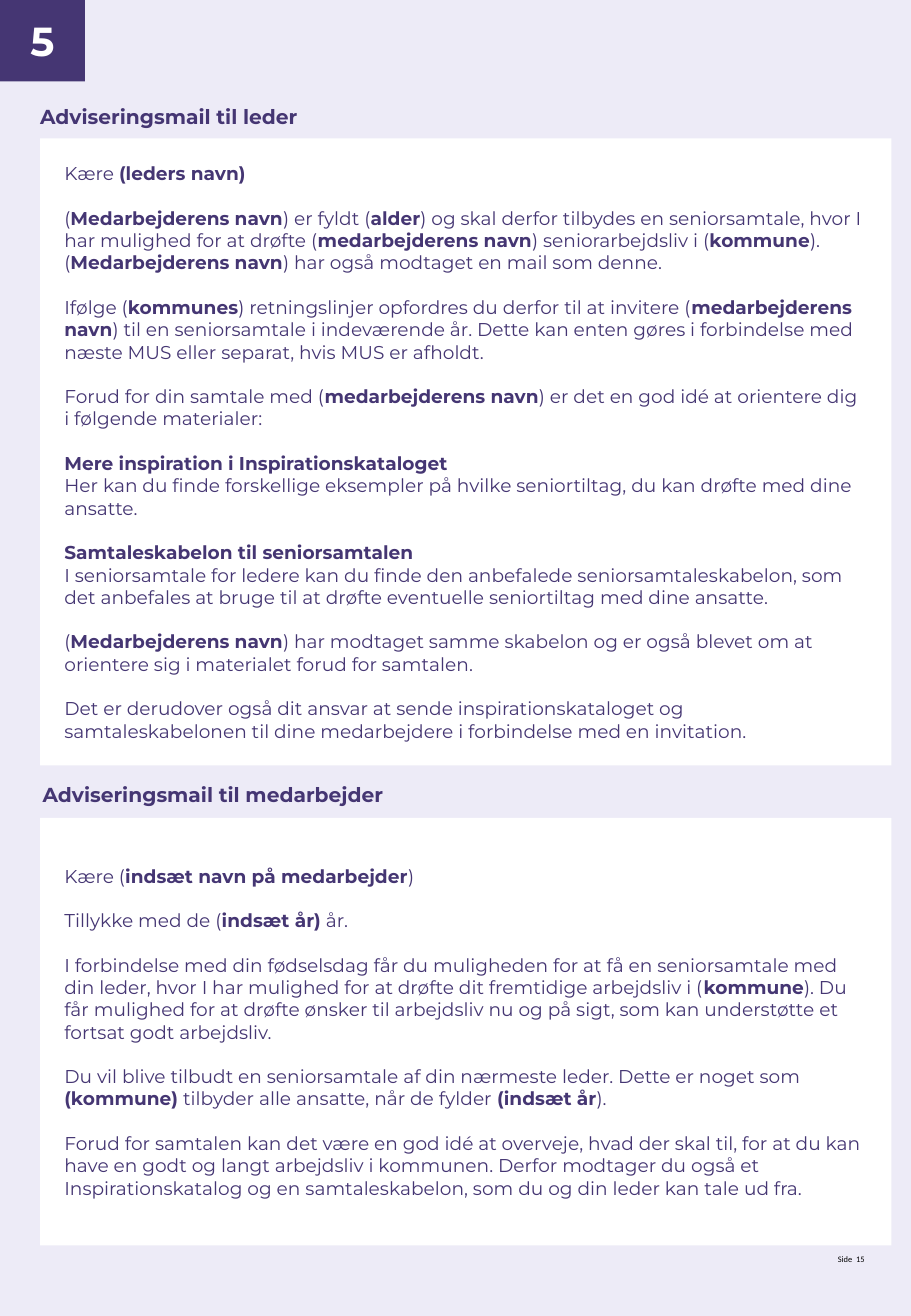
from pptx import Presentation
from pptx.dml.color import RGBColor
from pptx.enum.shapes import MSO_SHAPE
from pptx.enum.text import MSO_ANCHOR, MSO_AUTO_SIZE, PP_ALIGN
from pptx.util import Emu, Pt

PURPLE = RGBColor(0x45, 0x36, 0x73)
LAVENDER = RGBColor(0xED, 0xEB, 0xF7)
WHITE = RGBColor(0xFF, 0xFF, 0xFF)
BLACK = RGBColor(0x00, 0x00, 0x00)

EMU_PER_PX = 9144  # 100 px to the inch
MARGIN, MAIL_WIDTH, PADDING = 33, 701, 20
BLOCK_GAP = Pt(13.2)

HEADING = {"name": "Montserrat", "size": Pt(12), "bold": True}
NUMBER = {"name": "Montserrat", "size": Pt(24), "bold": True}
BODY = {"name": "Montserrat", "size": Pt(11)}
FOOTER = {"name": "Calibri", "size": Pt(5)}

# Each string is a block set off by a gap; asterisks enclose bold text.
LEADER_MAIL = [
    "Kære *(leders navn)*",
    "(*Medarbejderens navn*) er fyldt (*alder*) og skal derfor tilbydes en "
    "seniorsamtale, hvor I har mulighed for at drøfte (*medarbejderens navn*) "
    "seniorarbejdsliv i (*kommune*). (*Medarbejderens navn*) har også modtaget "
    "en mail som denne.",
    "Ifølge (*kommunes*) retningslinjer opfordres du derfor til at invitere "
    "(*medarbejderens navn*) til en seniorsamtale i indeværende år. Dette kan "
    "enten gøres i forbindelse med næste MUS eller separat, hvis MUS er afholdt.",
    "Forud for din samtale med (*medarbejderens navn*) er det en god idé at "
    "orientere dig i følgende materialer:",
    "*Mere inspiration i Inspirationskataloget*\n"
    "Her kan du finde forskellige eksempler på hvilke seniortiltag, du kan "
    "drøfte med dine ansatte.",
    "*Samtaleskabelon til seniorsamtalen*\n"
    "I seniorsamtale for ledere kan du finde den anbefalede "
    "seniorsamtaleskabelon, som det anbefales at bruge til at drøfte eventuelle "
    "seniortiltag med dine ansatte.",
    "(*Medarbejderens navn*) har modtaget samme skabelon og er også blevet om "
    "at orientere sig i materialet forud for samtalen.",
    "Det er derudover også dit ansvar at sende inspirationskataloget og "
    "samtaleskabelonen til dine medarbejdere i forbindelse med en invitation.",
]
EMPLOYEE_MAIL = [
    "Kære (*indsæt navn på medarbejder*)",
    "Tillykke med de (*indsæt år)* år.",
    "I forbindelse med din fødselsdag får du muligheden for at få en "
    "seniorsamtale med din leder, hvor I har mulighed for at drøfte dit "
    "fremtidige arbejdsliv i (*kommune*). Du får mulighed for at drøfte ønsker "
    "til arbejdsliv nu og på sigt, som kan understøtte et fortsat godt "
    "arbejdsliv.",
    "Du vil blive tilbudt en seniorsamtale af din nærmeste leder. Dette er "
    "noget som *(kommune)* tilbyder alle ansatte, når de fylder *(indsæt år*).",
    "Forud for samtalen kan det være en god idé at overveje, hvad der skal til, "
    "for at du kan have en godt og langt arbejdsliv i kommunen. Derfor modtager "
    "du også et Inspirationskatalog og en samtaleskabelon, som du og din leder "
    "kan tale ud fra.",
]


def px(*lengths):
    return [Emu(length * EMU_PER_PX) for length in lengths]


def set_values(target, values):
    for name, value in values.items():
        setattr(target, name, value)


def prepare_frame(box, padding, anchor):
    frame = box.text_frame
    inset, = px(padding)
    sides = ("left", "top", "right", "bottom")
    set_values(frame, {f"margin_{side}": inset for side in sides})
    set_values(frame, {"word_wrap": True, "auto_size": MSO_AUTO_SIZE.NONE,
                       "vertical_anchor": anchor})
    return frame


def add_span(para, text, style, color):
    span = para.add_run()
    span.text = text
    set_values(span.font, style)
    span.font.color.rgb = color


def write_line(box, text, style, color, align=PP_ALIGN.LEFT,
               padding=0, anchor=MSO_ANCHOR.TOP):
    para = prepare_frame(box, padding, anchor).paragraphs[0]
    para.alignment = align
    add_span(para, text, style, color)


def add_text(page, area, text, style, color, align=PP_ALIGN.LEFT):
    write_line(page.shapes.add_textbox(*px(*area)), text, style, color, align)


def add_panel(page, area, color):
    panel = page.shapes.add_shape(MSO_SHAPE.RECTANGLE, *px(*area))
    panel.shadow.inherit = False
    panel.fill.solid()
    panel.fill.fore_color.rgb = color
    panel.line.fill.background()
    return panel


def add_mail(page, top, height, blocks):
    panel = add_panel(page, (MARGIN, top, MAIL_WIDTH, height), WHITE)
    frame = prepare_frame(panel, PADDING, MSO_ANCHOR.MIDDLE)
    for block_index, block in enumerate(blocks):
        for line_index, line in enumerate(block.split("\n")):
            first = block_index == line_index == 0
            para = frame.paragraphs[0] if first else frame.add_paragraph()
            para.alignment = PP_ALIGN.LEFT
            if block_index and not line_index:
                para.space_before = BLOCK_GAP
            for part, text in enumerate(line.split("*")):
                if text:
                    add_span(para, text, BODY | {"bold": part % 2 == 1}, PURPLE)


def set_title(page, area, text):
    title = page.shapes.title
    set_values(title, dict(zip(("left", "top", "width", "height"), px(*area))))
    write_line(title, text, HEADING, PURPLE)


def main():
    deck = Presentation()
    deck.slide_width, deck.slide_height = px(750, 1083)
    page = deck.slides.add_slide(deck.slide_layouts[5])
    page.background.fill.solid()
    page.background.fill.fore_color.rgb = LAVENDER

    set_title(page, (MARGIN, 86, 501, 29), "Adviseringsmail til leder")
    number = add_panel(page, (0, 0, 70, 67), PURPLE)
    write_line(number, "5", NUMBER, WHITE, PP_ALIGN.CENTER,
               PADDING, MSO_ANCHOR.MIDDLE)
    add_mail(page, 114, 516, LEADER_MAIL)
    add_mail(page, 673, 352, EMPLOYEE_MAIL)
    add_text(page, (35, 644, 501, 29), "Adviseringsmail til medarbejder",
             HEADING, PURPLE)
    add_text(page, (618, 1032, 94, 23), "Side  15", FOOTER, BLACK,
             PP_ALIGN.RIGHT)
    deck.save("out.pptx")


if __name__ == "__main__":
    main()
